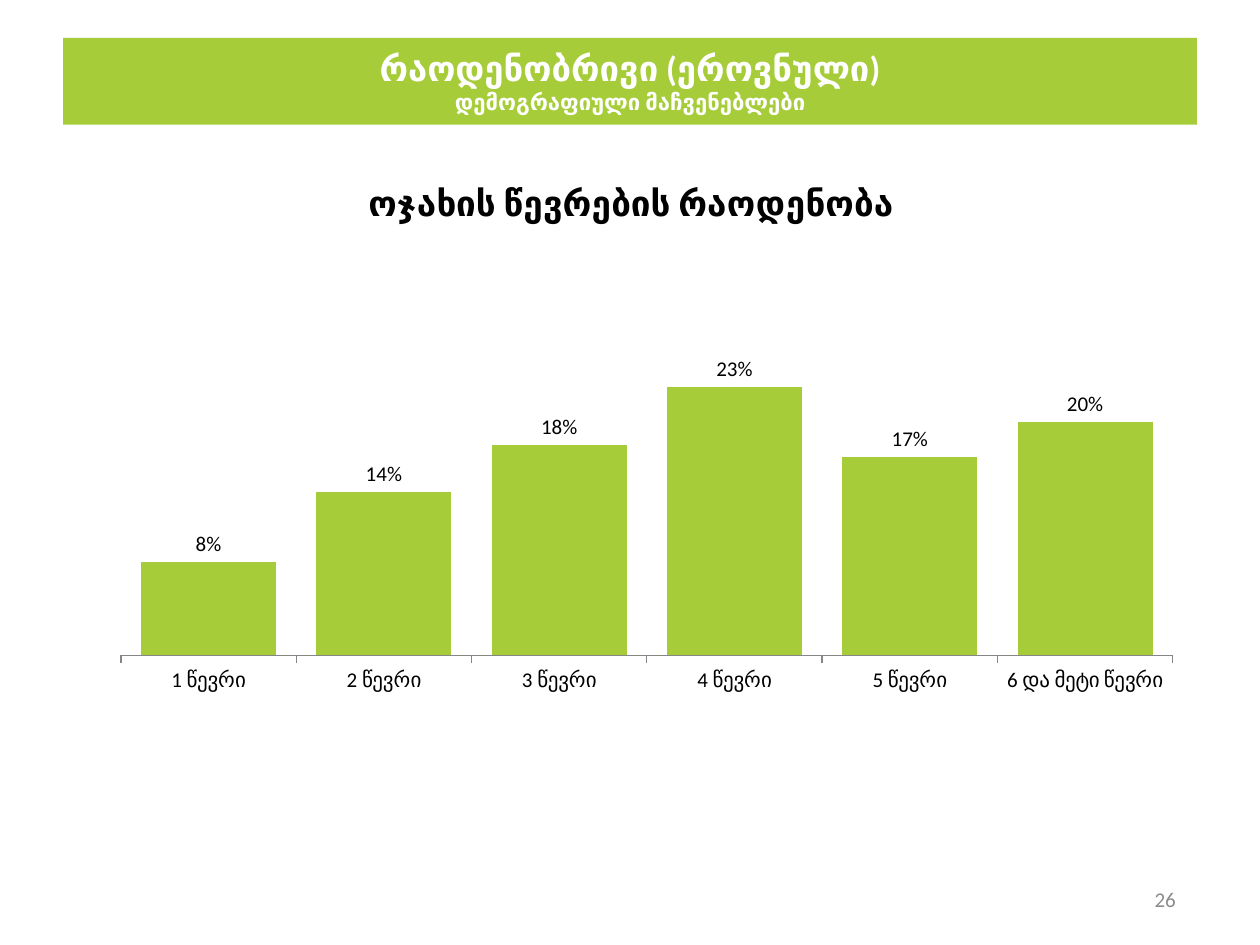
from lxml import etree
from pptx import Presentation
from pptx.chart.data import CategoryChartData
from pptx.dml.color import RGBColor
from pptx.enum.chart import XL_CHART_TYPE, XL_LABEL_POSITION, XL_TICK_LABEL_POSITION, XL_TICK_MARK
from pptx.enum.text import MSO_ANCHOR, MSO_AUTO_SIZE, PP_ALIGN
from pptx.oxml.ns import qn
from pptx.util import Inches, Pt

COLORS = {"green": "A6CD39", "white": "FFFFFF", "black": "000000", "gray": "8C8C8C", "axis": "868686"}
FONT = "Calibri"

HEADING = [("რაოდენობრივი (ეროვნული)", 19.8), ("დემოგრაფიული მაჩვენებლები", 12.6)]
CHART_TITLE = "ოჯახის წევრების რაოდენობა"
HOUSEHOLDS = [
    ("1 წევრი", 0.08),
    ("2 წევრი", 0.14),
    ("3 წევრი", 0.18),
    ("4 წევრი", 0.23),
    ("5 წევრი", 0.17),
    ("6 და მეტი წევრი", 0.2),
]
PAGE_NUMBER = "26"
TITLE_LAYOUT = {"xMode": "edge", "yMode": "edge", "x": 0.26, "y": 0.04}
PLOT_LAYOUT = {"layoutTarget": "inner", "xMode": "edge", "yMode": "edge",
               "x": 0.045, "y": 0.063, "w": 0.938, "h": 0.683}


def color(name):
    return RGBColor.from_string(COLORS[name])


def style(font, size, color_name, bold=False):
    for key, value in {"name": FONT, "size": Pt(size), "bold": bold}.items():
        setattr(font, key, value)
    font.color.rgb = color(color_name)


def place(shape, left, top, width, height):
    for key, value in zip(("left", "top", "width", "height"), (left, top, width, height)):
        setattr(shape, key, Inches(value))


def set_layout(parent, values):
    """Give a chart title or plot area a manual layout."""
    layout = parent.find(qn("c:layout"))
    if layout is None:
        layout = etree.Element(qn("c:layout"))
        text = parent.find(qn("c:tx"))
        parent.insert(0 if text is None else 1, layout)
    for child in list(layout):
        layout.remove(child)
    manual = etree.SubElement(layout, qn("c:manualLayout"))
    for key, value in values.items():
        etree.SubElement(manual, qn(f"c:{key}")).set("val", str(value))


deck = Presentation()
deck.slide_width, deck.slide_height = Inches(10), Inches(7.5)
page = deck.slides.add_slide(deck.slide_layouts[5])

# Heading band
band = page.shapes.title
place(band, 0.5, 0.3, 9, 0.69)
band.fill.solid()
band.fill.fore_color.rgb = color("green")
frame = band.text_frame
frame.auto_size = MSO_AUTO_SIZE.NONE
frame.vertical_anchor = MSO_ANCHOR.MIDDLE
para = frame.paragraphs[0]
para.alignment = PP_ALIGN.CENTER
for index, (text, size) in enumerate(HEADING):
    if index:
        para.add_line_break()
    span = para.add_run()
    span.text = text
    style(span.font, size, "white", True)

# Page number
box = page.shapes.add_textbox(Inches(9.02), Inches(6.94), Inches(0.41), Inches(0.4))
box.text_frame.word_wrap = True
box.text_frame.vertical_anchor = MSO_ANCHOR.MIDDLE
para = box.text_frame.paragraphs[0]
para.alignment = PP_ALIGN.RIGHT
span = para.add_run()
span.text = PAGE_NUMBER
style(span.font, 12, "gray")

# Household size chart
data = CategoryChartData(number_format="0%")
data.categories = [name for name, share in HOUSEHOLDS]
data.add_series(CHART_TITLE, [share for name, share in HOUSEHOLDS])
chart = page.shapes.add_chart(XL_CHART_TYPE.COLUMN_CLUSTERED, Inches(0.56), Inches(1.15),
                              Inches(8.9), Inches(5.43), data).chart
style(chart.font, 18, "black")
chart.has_legend = False
chart.has_title = True
span = chart.chart_title.text_frame.paragraphs[0].add_run()
span.text = CHART_TITLE
style(span.font, 20, "black", True)

# Columns and labels
plot = chart.plots[0]
plot.gap_width = 30
plot.vary_by_categories = False
columns = plot.series[0]
columns.format.fill.solid()
columns.format.fill.fore_color.rgb = color("green")
labels = columns.data_labels
for key, value in {"show_value": True, "number_format": "0%", "number_format_is_linked": False,
                   "position": XL_LABEL_POSITION.OUTSIDE_END}.items():
    setattr(labels, key, value)
style(labels.font, 12, "black")

# Axes
for key, value in {"minimum_scale": 0, "maximum_scale": 0.4, "major_unit": 0.2,
                   "has_major_gridlines": False, "visible": False}.items():
    setattr(chart.value_axis, key, value)
axis = chart.category_axis
axis.major_tick_mark = XL_TICK_MARK.OUTSIDE
axis.tick_label_position = XL_TICK_LABEL_POSITION.LOW
axis.format.line.color.rgb = color("axis")
style(axis.tick_labels.font, 12, "black")

set_layout(chart.chart_title.text_frame._txBody.getparent().getparent(), TITLE_LAYOUT)
set_layout(plot._element.getparent(), PLOT_LAYOUT)

deck.save("out.pptx")
